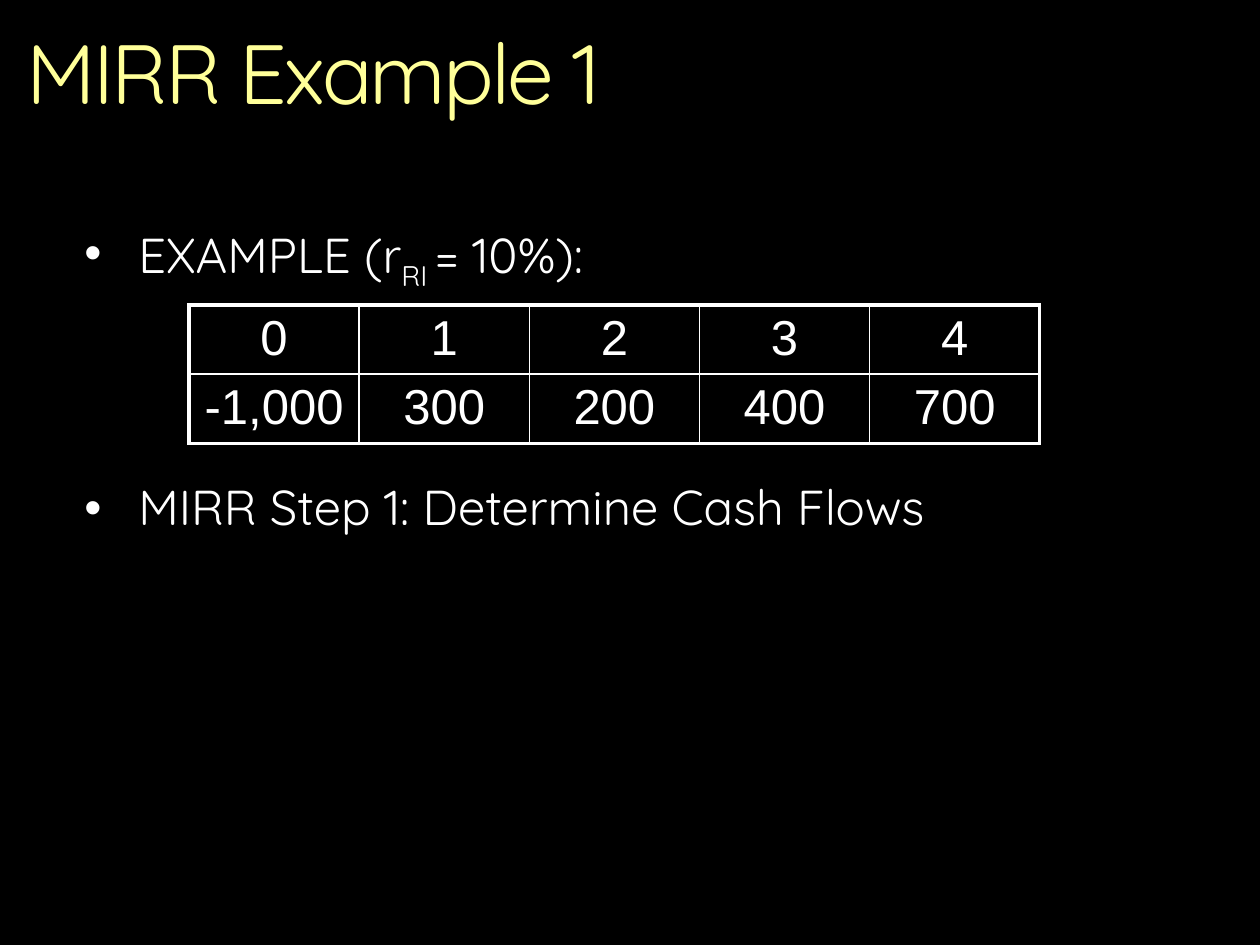
from lxml.etree import SubElement
from pptx import Presentation
from pptx.dml.color import RGBColor
from pptx.enum.text import MSO_ANCHOR as Anchor, PP_ALIGN as Align
from pptx.oxml import parse_xml
from pptx.oxml.ns import nsdecls, qn
from pptx.util import Cm, Pt

BLACK = RGBColor(0x00, 0x00, 0x00)
WHITE = RGBColor(0xFF, 0xFF, 0xFF)
YELLOW = RGBColor(0xFF, 0xFF, 0x99)


class Deck:
    """Holds the style and the current slide."""

    text_font = "Quicksand"
    table_font = "Arial"
    title_size = Pt(48)
    body_size = Pt(28)
    indent = Cm(1.09)
    thin, thick = Pt(1), Pt(2.25)

    def __init__(self):
        self.prs = Presentation()
        self.prs.slide_width, self.prs.slide_height = Cm(25.4), Cm(19.05)

    def add_slide(self):
        self.slide = self.prs.slides.add_slide(self.prs.slide_layouts[5])
        background = self.slide.background.fill
        background.solid()
        background.fore_color.rgb = BLACK

    def style(self, paragraph, name, size, color):
        font = paragraph.font
        font.name, font.size = name, size
        font.color.rgb = color

    def frame(self, shape, inset_top=0):
        frame = shape.text_frame
        frame.word_wrap = True
        frame.vertical_anchor = Anchor.TOP
        frame.margin_left = frame.margin_right = frame.margin_bottom = 0
        frame.margin_top = inset_top
        return frame

    def place(self, shape, left, top, width, height):
        shape.left, shape.top = left, top
        shape.width, shape.height = width, height

    def title(self, text, *box):
        heading = self.slide.shapes.title
        self.place(heading, *box)
        paragraph = self.frame(heading).paragraphs[0]
        run = paragraph.add_run()
        run.text = text
        run.font._element.set("spc", "-150")
        paragraph.alignment = Align.LEFT
        paragraph.line_spacing = 0.9
        self.style(paragraph, self.text_font, self.title_size, YELLOW)

    def bullets(self, items, gap, *box):
        """Each item is a list of (text, is_subscript) pairs."""
        frame = self.frame(self.slide.shapes.add_textbox(*box), Cm(0.1))
        for number, parts in enumerate(items):
            paragraph = frame.add_paragraph() if number else frame.paragraphs[0]
            properties = paragraph._p.get_or_add_pPr()
            properties.set("marL", str(self.indent))
            properties.set("indent", str(-self.indent))
            SubElement(properties, qn("a:buFont")).set("typeface", "Arial")
            SubElement(properties, qn("a:buChar")).set("char", "•")
            paragraph.line_spacing = 0.9
            if number:
                paragraph.space_before = gap
            for text, subscript in parts:
                run = paragraph.add_run()
                run.text = text
                if subscript:
                    run.font._element.set("baseline", "-25000")
            self.style(paragraph, self.text_font, self.body_size, WHITE)

    def borders(self, cell, outer_sides):
        properties = cell._tc.get_or_add_tcPr()
        for place, side in enumerate("LRTB"):
            width = self.thick if side in outer_sides else self.thin
            properties.insert(place, parse_xml(
                f'<a:ln{side} {nsdecls("a")} w="{width}"><a:solidFill>'
                f'<a:srgbClr val="{WHITE}"/></a:solidFill></a:ln{side}>'))

    def table(self, rows, left, top, column_width, row_height):
        last_row, last_column = len(rows) - 1, len(rows[0]) - 1
        grid = self.slide.shapes.add_table(
            len(rows), len(rows[0]), left, top,
            column_width * len(rows[0]), row_height * len(rows)).table
        grid.first_row = grid.horz_banding = False
        for r, values in enumerate(rows):
            for c, value in enumerate(values):
                cell = grid.cell(r, c)
                cell.margin_bottom = Cm(0.08)
                cell.fill.background()
                edges = {"L": c == 0, "R": c == last_column,
                         "T": r == 0, "B": r == last_row}
                self.borders(cell, [side for side, outer in edges.items() if outer])
                cell.text = value
                paragraph = cell.text_frame.paragraphs[0]
                paragraph.alignment = Align.CENTER
                self.style(paragraph, self.table_font, self.body_size, WHITE)


def main():
    deck = Deck()
    deck.add_slide()

    # Heading
    deck.title("MIRR Example 1", Cm(0.53), Cm(0.64), Cm(22.28), Cm(1.85))

    # Bullets, with room for the table between them
    deck.bullets(
        [[("EXAMPLE (r", False), ("RI ", True), ("= 10%):", False)],
         [("MIRR Step 1: Determine Cash Flows", False)]],
        Pt(113), Cm(1.7), Cm(4.45), Cm(21.39), Cm(7.67))

    # Cash flows by year
    deck.table(
        [["0", "1", "2", "3", "4"],
         ["-1,000", "300", "200", "400", "700"]],
        Cm(3.81), Cm(6.15), Cm(3.43), Cm(1.36))

    deck.prs.save("out.pptx")


if __name__ == "__main__":
    main()
